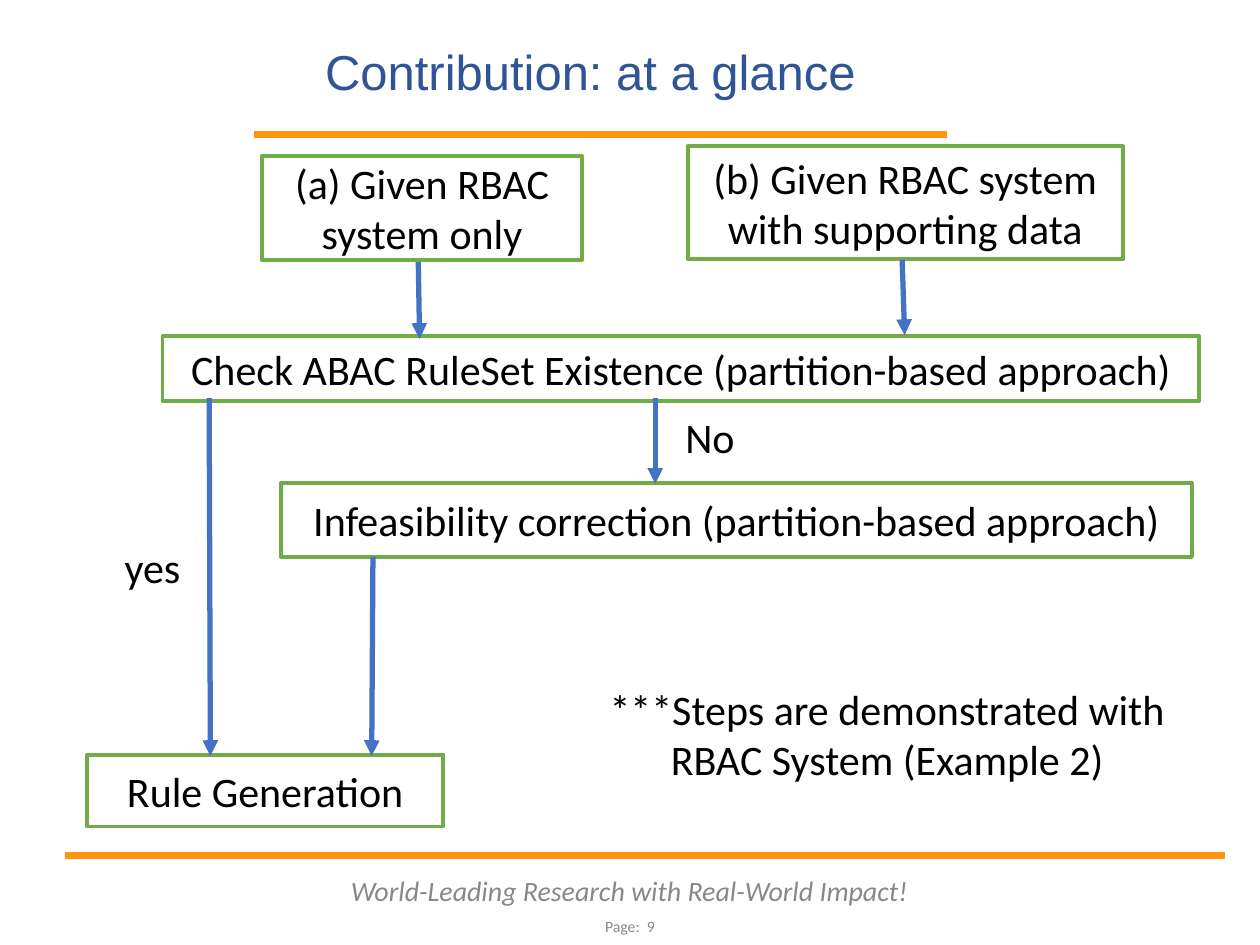
from lxml.etree import SubElement
from pptx import Presentation
from pptx.dml.color import RGBColor
from pptx.enum.shapes import MSO_SHAPE, MSO_CONNECTOR
from pptx.enum.text import MSO_ANCHOR, PP_ALIGN
from pptx.oxml.ns import qn
from pptx.util import Inches, Pt

theme = {
    "title": {"name": "Arial", "size": Pt(28), "color": "2F5597"},
    "step": {"name": "Calibri", "size": Pt(24), "color": "000000"},
    "motto": {"name": "Calibri", "size": Pt(16), "color": "888888", "italic": True},
    "page": {"name": "Calibri", "size": Pt(9), "color": "888888"},
    "white": "FFFFFF",
    "edge": "70AD47",
    "arrow": "4472C4",
    "rule": "FF950E",
}


def write(shape, text, style, anchor=MSO_ANCHOR.MIDDLE):
    frame = shape.text_frame
    frame.word_wrap = True
    frame.vertical_anchor = anchor
    para = frame.paragraphs[0]
    para.text = text
    para.alignment = PP_ALIGN.CENTER
    for key, value in theme[style].items():
        if key == "color":
            para.font.color.rgb = RGBColor.from_string(value)
        else:
            setattr(para.font, key, value)


def draw_line(x1, y1, x2, y2, color, width, head=False):
    line = slide.shapes.add_connector(
        MSO_CONNECTOR.STRAIGHT, Inches(x1), Inches(y1), Inches(x2), Inches(y2))
    line.line.color.rgb = RGBColor.from_string(theme[color])
    line.line.width = Pt(width)
    if head:
        SubElement(line.line._get_or_add_ln(), qn("a:tailEnd"), type="triangle")
    SubElement(line._element.spPr, qn("a:effectLst"))


deck = Presentation()
deck.slide_width, deck.slide_height = Inches(10), Inches(7.5)
slide = deck.slides.add_slide(deck.slide_layouts[5])

# Title and footer
title = slide.shapes.title
title.left, title.top = Inches(1.99), Inches(0.34)
title.width, title.height = Inches(5.39), Inches(0.51)
write(title, "Contribution: at a glance", "title", MSO_ANCHOR.BOTTOM)
title.text_frame.paragraphs[0].line_spacing = 0.9

draw_line(2.02, 1.07, 7.52, 1.07, "rule", 4)
draw_line(0.52, 6.79, 9.72, 6.79, "rule", 4)

for text, style, x, y, w in [
    ("World-Leading Research with Real-World Impact!", "motto", 2.58, 6.89, 4.83),
    ("Page:  9", "page", 4.06, 7.17, 1.88),
]:
    box = slide.shapes.add_textbox(Inches(x), Inches(y), Inches(w), Inches(0.36))
    write(box, text, style)

# Steps, branch labels and note
for text, edge, *area in [
    ("Check ABAC RuleSet Existence (partition-based approach)", "edge", 1.29, 2.67, 8.23, 0.51),
    ("Rule Generation", "edge", 0.69, 5.99, 2.83, 0.57),
    ("Infeasibility correction (partition-based approach)", "edge", 2.23, 3.83, 7.23, 0.59),
    ("(b) Given RBAC system with supporting data", "edge", 5.46, 1.16, 3.45, 0.9),
    ("(a) Given RBAC system only", "edge", 2.08, 1.24, 2.54, 0.82),
    ("yes", "white", 0.85, 4.29, 0.72, 0.41),
    ("No", "white", 5.33, 3.24, 0.61, 0.46),
    ("***Steps are demonstrated with RBAC System (Example 2)", None, 4.62, 5.22, 4.84, 1.21),
]:
    step = slide.shapes.add_shape(MSO_SHAPE.RECTANGLE, *map(Inches, area))
    step.shadow.inherit = False
    step.fill.solid()
    step.fill.fore_color.rgb = RGBColor.from_string(theme["white"])
    if edge:
        step.line.color.rgb = RGBColor.from_string(theme[edge])
        step.line.width = Pt(2.25)
    else:
        step.line.fill.background()
    write(step, text, "step")

# Flow
for ends in [
    (1.66, 3.16, 1.67, 6),
    (5.2, 3.16, 5.2, 3.84),
    (2.96, 4.42, 2.95, 6),
    (7.16, 2.06, 7.18, 2.66),
    (3.32, 2.08, 3.33, 2.69),
]:
    draw_line(*ends, "arrow", 3, head=True)

deck.save("out.pptx")
